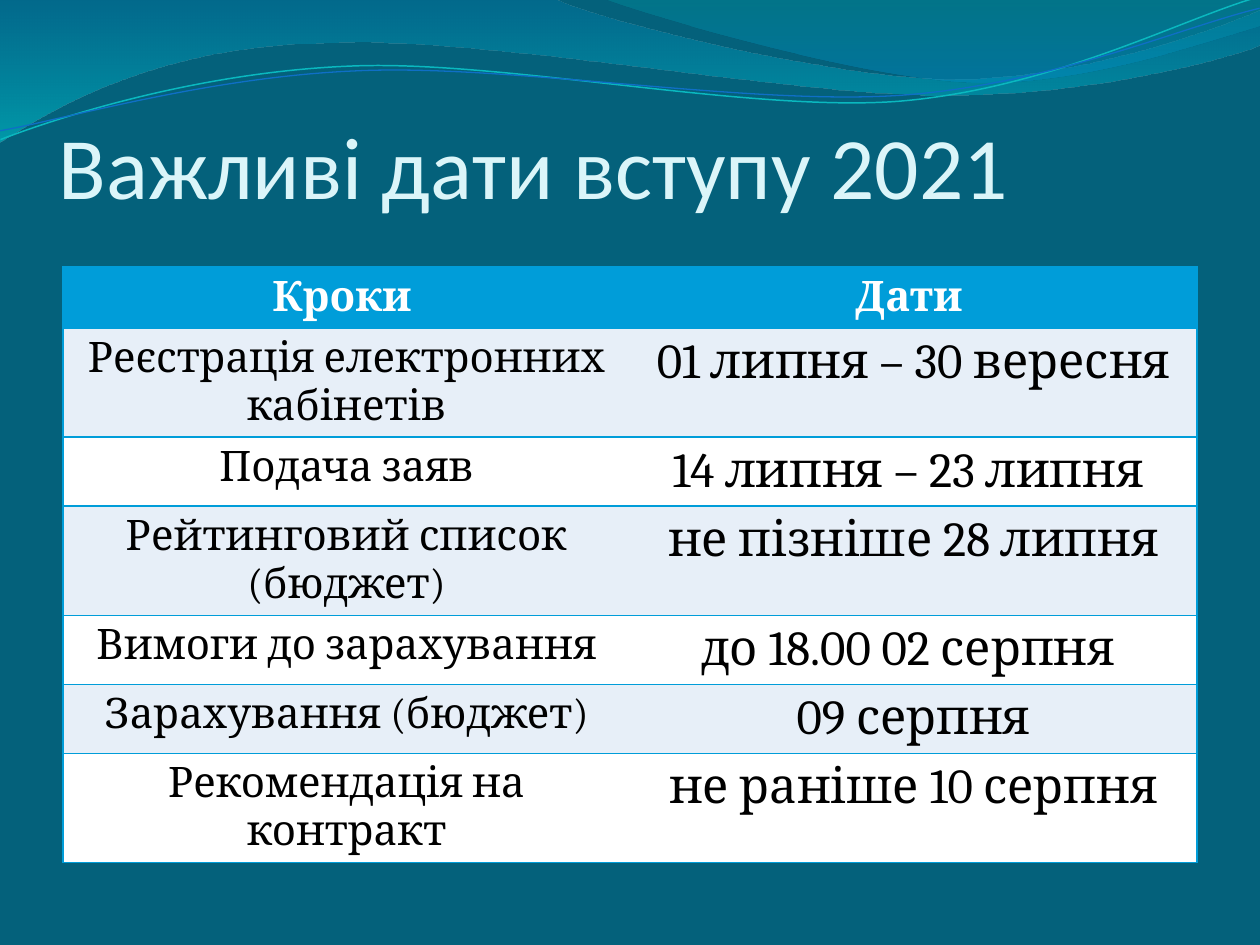
from lxml import etree
from pptx import Presentation
from pptx import util as u
from pptx.dml.color import RGBColor
from pptx.enum import text
from pptx.oxml import ns

PX = 914400 / 126  # EMU per px

BACKGROUND = RGBColor(0x04, 0x61, 0x7B)
TITLE_COLOR = RGBColor(0xDB, 0xF5, 0xF9)
ACCENT = RGBColor(0x00, 0x9D, 0xD9)
BAND = RGBColor(0xE7, 0xEF, 0xF8)
WHITE = RGBColor(0xFF, 0xFF, 0xFF)
BLACK = RGBColor(0x00, 0x00, 0x00)
BLUE_DEEP = RGBColor(0x00, 0x74, 0xA1)
CYAN = RGBColor(0x00, 0xC6, 0xCF)
TEAL = RGBColor(0x00, 0xA1, 0xA9)
BLUE_MID = RGBColor(0x00, 0x8B, 0xBF)
LINE_TEAL = RGBColor(0x0A, 0xB8, 0xBF)
LINE_BLUE = RGBColor(0x0F, 0x6F, 0xC6)


def emu(px):
    return u.Emu(round(px * PX))


def add_curve(slide, start, segments, close):
    """Draw lines (2 numbers) and Bezier curves (6 numbers) as one freeform."""
    builder = slide.shapes.build_freeform(*map(emu, start))
    for segment in segments:
        lengths = [emu(number) for number in segment]
        builder.add_line_segments(list(zip(lengths[::2], lengths[1::2])), close=False)
    if close:
        builder.add_line_segments([], close=True)
    shape = builder.convert_to_shape()
    shape.shadow.inherit = False

    # Join the three points of each Bezier segment into one curve
    steps = iter(list(shape._element.iter(ns.qn("a:lnTo"))))
    for segment in segments:
        first = next(steps)
        if len(segment) == 6:
            first.tag = ns.qn("a:cubicBezTo")
            for _ in range(2):
                step = next(steps)
                first.append(step[0])
                step.getparent().remove(step)
    return shape


presentation = Presentation()
presentation.slide_width = emu(1260)
presentation.slide_height = emu(945)
slide = presentation.slides.add_slide(presentation.slide_layouts[5])
slide.background.fill.solid()
slide.background.fill.fore_color.rgb = BACKGROUND

# Translucent waves: start, segments, gradient stops (position, colour, opacity %)
waves = [
    ((0, 0),
     [(554, -1), (600, 21, 837, 79, 955, 79), (1075, 79, 1207, 33, 1260, 11),
      (1261, 45), (1239, 55, 1096, 96, 940, 95), (784, 95, 481, 35, 324, 43),
      (163, 45, 58, 105, -1, 142), (0, 0)],
     [(0, BLUE_DEEP, 45), (1, CYAN, 55)]),
    ((604, -1),
     [(641, 14, 859, 78, 969, 82), (1079, 87, 1211, 40, 1260, 26), (1260, 0),
      (604, -1)],
     [(0, TEAL, 30), (0.8, BLUE_MID, 45)]),
]
for start, segments, stops in waves:
    wave = add_curve(slide, start, segments, True)
    wave.line.fill.background()
    wave.fill.gradient()
    wave.fill.gradient_angle = 270
    for stop, (position, color, _) in zip(wave.fill.gradient_stops, stops):
        stop.position = position
        stop.color.rgb = color
    colors = wave._element.iter(ns.qn("a:srgbClr"))
    for color_element, (_, _, opacity) in zip(list(colors), stops):
        etree.SubElement(color_element, ns.qn("a:alpha"), val=str(opacity * 1000))

# Thin lines along the waves, slightly rotated
lines = [
    ((-2, 110), [(58, 90, 199, 52, 350, 53), (499, 53, 745, 118, 896, 114),
                 (1049, 109, 1184, 45, 1260, 27)], LINE_TEAL, 0.85),
    ((-2, 101), [(57, 94, 207, 57, 357, 58), (509, 58, 750, 112, 902, 108),
                 (1052, 104, 1187, 52, 1262, 38)], LINE_BLUE, 0.75),
]
for start, segments, color, width in lines:
    line = add_curve(slide, start, segments, False)
    line.rotation = 357.3
    line.fill.background()
    line.line.color.rgb = color
    line.line.width = u.Pt(width)

# Title
title = slide.shapes.title
title.left, title.top, title.width, title.height = map(emu, (59, 59, 1134, 158))
frame = title.text_frame
frame.text = "Важливі дати вступу 2021"
frame_format = {
    "margin_left": 0, "margin_top": emu(6), "margin_right": 0, "margin_bottom": 0,
    "vertical_anchor": text.MSO_ANCHOR.BOTTOM, "word_wrap": True,
    "auto_size": text.MSO_AUTO_SIZE.NONE,
}
for name, value in frame_format.items():
    setattr(frame, name, value)
paragraph = frame.paragraphs[0]
paragraph.alignment = text.PP_ALIGN.LEFT
font = paragraph.runs[0].font
for name, value in {"size": u.Pt(50), "name": "Calibri", "bold": False}.items():
    setattr(font, name, value)
font.color.rgb = TITLE_COLOR

# Table of admission steps; rows grow to fit their text
rows = [
    ("Кроки ", "Дати "),
    ("Реєстрація електронних кабінетів", "01 липня – 30 вересня"),
    ("Подача заяв", "14 липня – 23 липня "),
    ("Рейтинговий список (бюджет)", "не пізніше 28 липня"),
    ("Вимоги до зарахування", "до 18.00 02 серпня "),
    ("Зарахування (бюджет)", "09 серпня"),
    ("Рекомендація на контракт", "не раніше 10 серпня"),
]
table_frame = slide.shapes.add_table(len(rows), 2, emu(63), emu(267), emu(1134), emu(576))
table = table_frame.table
for row_index, row in enumerate(rows):
    table.rows[row_index].height = emu(52)
    header = row_index == 0
    for column_index, content in enumerate(row):
        cell = table.cell(row_index, column_index)
        cell.text = content
        paragraph = cell.text_frame.paragraphs[0]
        paragraph.alignment = text.PP_ALIGN.CENTER
        font = paragraph.runs[0].font
        size = 28 if column_index and not header else 24
        for name, value in {"size": u.Pt(size), "name": "Cambria", "bold": header}.items():
            setattr(font, name, value)
        font.color.rgb = WHITE if header else BLACK

        # Borders everywhere except between the two columns
        properties = cell._tc.get_or_add_tcPr()
        inner_side = "lnL" if column_index else "lnR"
        for side in ("lnL", "lnR", "lnT", "lnB"):
            border = etree.SubElement(properties, ns.qn("a:" + side), w=str(u.Pt(1)))
            if side == inner_side:
                etree.SubElement(border, ns.qn("a:noFill"))
            else:
                fill = etree.SubElement(border, ns.qn("a:solidFill"))
                etree.SubElement(fill, ns.qn("a:srgbClr"), val=str(ACCENT))
        cell.fill.solid()
        cell.fill.fore_color.rgb = ACCENT if header else (BAND if row_index % 2 else WHITE)
table_frame.height = emu(576)

presentation.save("out.pptx")
